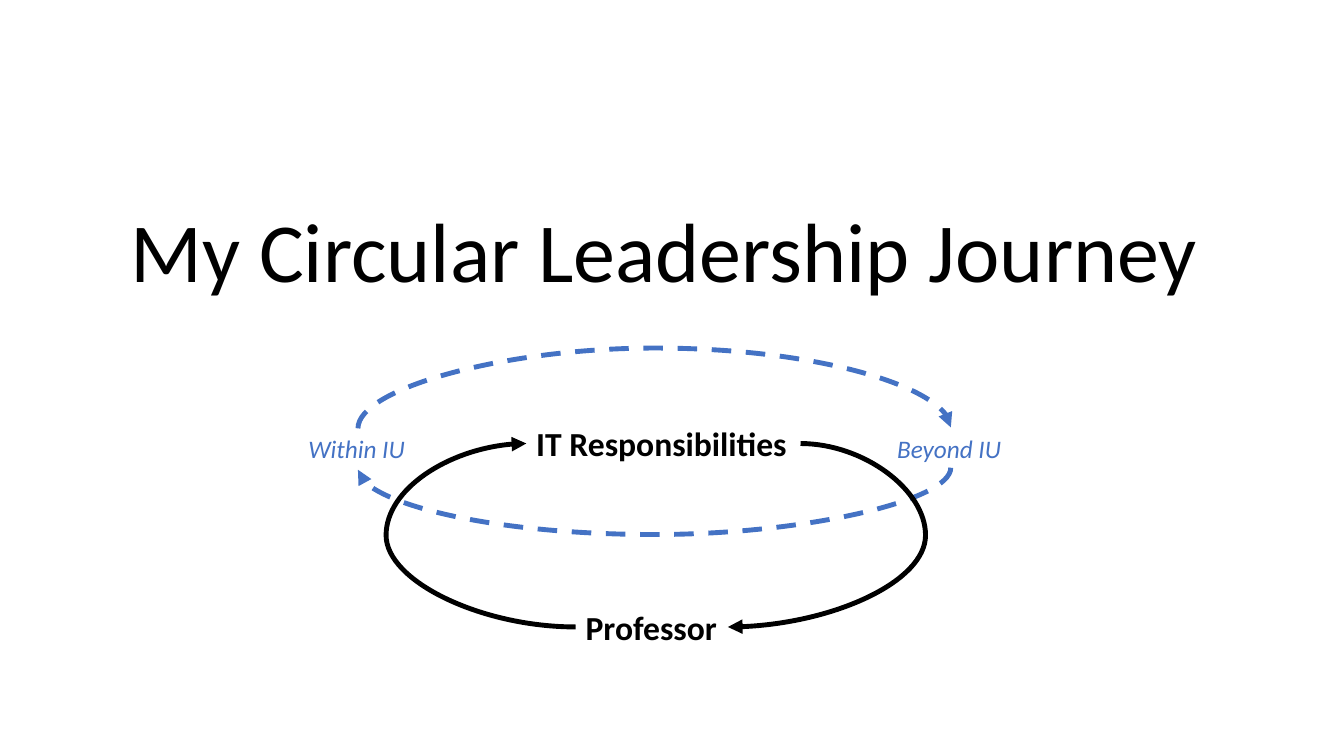
import pptx
import pptx.util
import pptx.dml.color
import pptx.enum.dml
import pptx.enum.shapes
import pptx.enum.text
import pptx.oxml
import pptx.oxml.ns

Inches = pptx.util.Inches
qn = pptx.oxml.ns.qn
ALIGN = pptx.enum.text.PP_ALIGN
ANCHOR = pptx.enum.text.MSO_ANCHOR
COLORS = {"ink": "000000", "blue": "4472C4"}


def color(name):
    return pptx.dml.color.RGBColor.from_string(COLORS[name])


def add_text(slide, text, left, top, width, height, size=24, tint="ink",
             bold=False, italic=False, wrap=False, align=ALIGN.LEFT,
             anchor=ANCHOR.TOP, space=1.0):
    box = slide.shapes.add_textbox(*map(Inches, (left, top, width, height)))
    frame = box.text_frame
    frame.word_wrap = wrap
    frame.vertical_anchor = anchor
    para = frame.paragraphs[0]
    para.alignment = align
    para.line_spacing = space
    run = para.add_run()
    run.text = text
    font = run.font
    font.name = "Calibri"
    font.size = pptx.util.Pt(size)
    font.bold = bold
    font.italic = italic
    font.color.rgb = color(tint)


def add_arc(slide, start, end, bulge, tint="ink", dash=False, turn=False):
    """Curved arrow reaching out to bulge: an x, or a y when turned."""
    axis = 1 if turn else 0
    adj = (bulge - start[axis]) / (end[axis] - start[axis])
    if turn:
        # Ends before the quarter turn about the middle
        mid_x, mid_y = ((a + b) / 2 for a, b in zip(start, end))
        start, end = ((mid_x + y - mid_y, mid_y - x + mid_x)
                      for x, y in (start, end))
    arc = slide.shapes.add_connector(
        pptx.enum.shapes.MSO_CONNECTOR.CURVE, *map(Inches, (*start, *end)))
    arc.line.color.rgb = color(tint)
    arc.line.width = pptx.util.Pt(3.5)
    if dash:
        arc.line.dash_style = pptx.enum.dml.MSO_LINE.DASH

    # Bend, turn, arrowhead and no shadow
    props = arc._element.spPr
    if turn:
        props.find(qn("a:xfrm")).set("rot", str(90 * 60000))
    guide = pptx.oxml.parse_xml(
        '<a:gd xmlns:a="http://schemas.openxmlformats.org/drawingml/2006/main"'
        f' name="adj1" fmla="val {round(adj * 100000)}"/>')
    props.find(qn("a:prstGeom")).find(qn("a:avLst")).append(guide)
    head = props.find(qn("a:ln")).makeelement(qn("a:tailEnd"), {"type": "triangle"})
    props.find(qn("a:ln")).append(head)
    props.append(props.makeelement(qn("a:effectLst"), {}))


def add_title(slide, left, top, width, height):
    add_text(slide, "My Circular Leadership Journey", left, top, width, height,
             size=60, wrap=True, align=ALIGN.CENTER, anchor=ANCHOR.MIDDLE,
             space=0.9)


def add_scope(slide, left, top, width, height):
    """Dashed loop between the two places."""
    west, east = left + 0.59, left + width - 0.61
    look = {"tint": "blue", "dash": True, "turn": True}
    for text, x, wide in (("Within IU", left, 1.17),
                          ("Beyond IU", left + width - 1.24, 1.24)):
        add_text(slide, text, x, top + 0.81, wide, 0.4, size=18,
                 tint="blue", italic=True)
    add_arc(slide, (west, top + 0.81), (east, top + 0.8), top, **look)
    add_arc(slide, (east, top + 1.2), (west, top + 1.22), top + height, **look)


def add_roles(slide, left, top, width, height):
    """Solid loop between the two roles."""
    high, low = top + 0.25, top + height - 0.25
    add_text(slide, "Professor", left + 1.88, low - 0.25, 1.52, 0.5, bold=True)
    add_text(slide, "IT Responsibilities", left + 1.39, top, 2.71, 0.5, bold=True)
    add_arc(slide, (left + 4.11, high), (left + 3.39, low), left + width)
    add_arc(slide, (left + 1.88, low), (left + 1.39, high), left)


def main():
    deck = pptx.Presentation()
    deck.slide_width, deck.slide_height = Inches(13.33), Inches(7.5)
    slide = deck.slides.add_slide(deck.slide_layouts[6])
    add_title(slide, 0.43, 1.23, 12.31, 2.61)
    add_scope(slide, 2.96, 3.44, 7.08, 1.86)
    add_roles(slide, 3.83, 4.15, 5.35, 2.32)
    deck.save("out.pptx")


if __name__ == "__main__":
    main()
